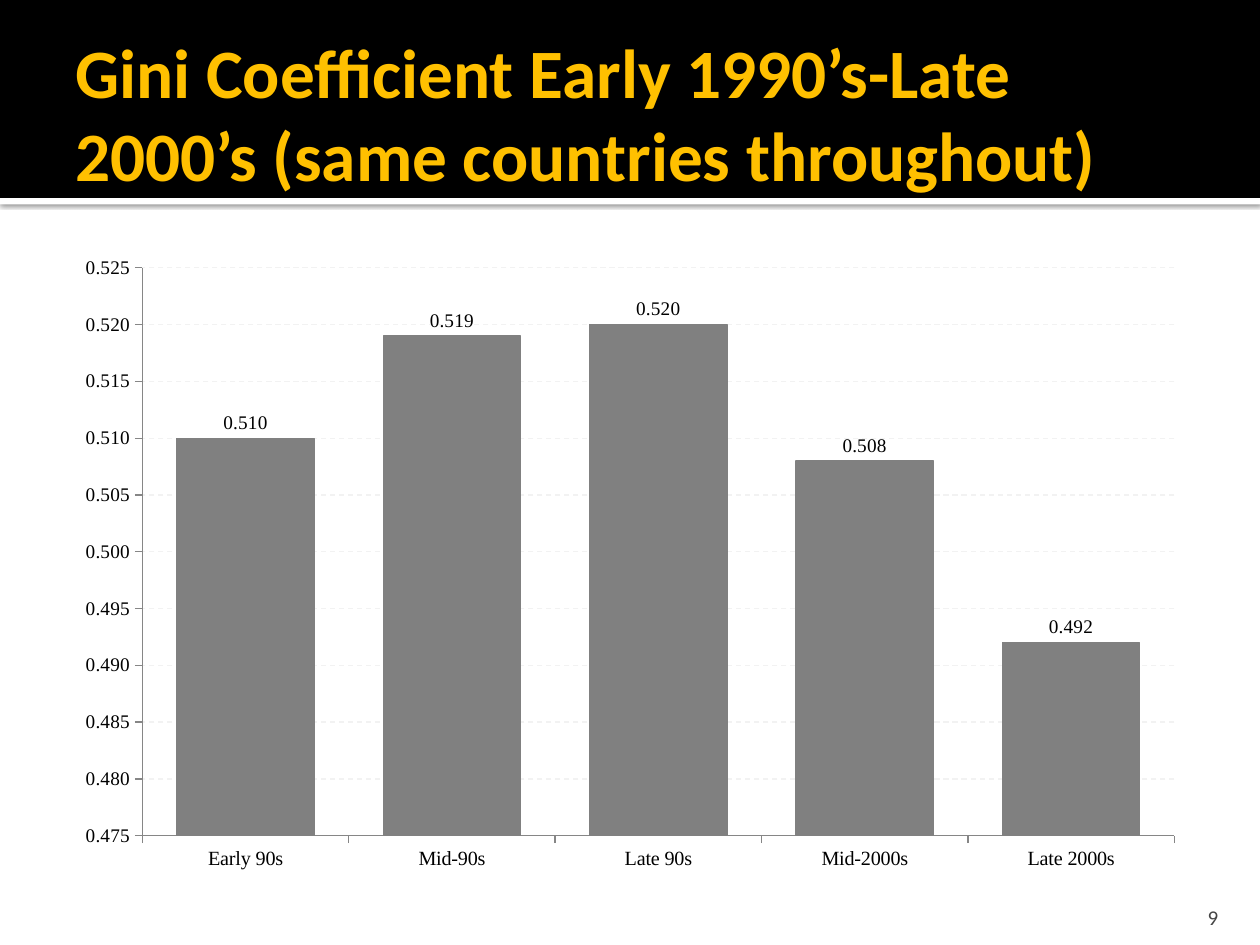
"""Build a slide with a column chart of Gini coefficients over five periods."""
import pptx
import pptx.chart.data
import pptx.dml.color
import pptx.enum.chart
import pptx.enum.dml
import pptx.enum.shapes
import pptx.enum.text
import pptx.oxml
import pptx.util
from pptx.util import Cm, Pt

TITLE = "Gini Coefficient Early 1990’s-Late 2000’s (same countries throughout)"
PAGE_NUMBER = "9"
GINI = {
    "Early 90s": 0.510,
    "Mid-90s": 0.519,
    "Late 90s": 0.520,
    "Mid-2000s": 0.508,
    "Late 2000s": 0.492,
}
NUMBER_FORMAT = "0.000"
AXIS_RANGE = (0.475, 0.525, 0.005)
SLIDE_SIZE = (25.4, 19.05)
HEADER_HEIGHT = 3.99
STRIP_HEIGHT = 0.13
MARGIN = 1.27
CONTENT_WIDTH = SLIDE_SIZE[0] - 2 * MARGIN
SHADOW = (
    '<a:effectLst xmlns:a="http://schemas.openxmlformats.org/drawingml/2006/main">'
    '<a:outerShdw blurRad="31750" dist="10160" dir="5400000" algn="tl" rotWithShape="0">'
    '<a:srgbClr val="000000"><a:alpha val="60000"/></a:srgbClr>'
    "</a:outerShdw></a:effectLst>"
)


def color(value):
    return pptx.dml.color.RGBColor.from_string(value)


def style_font(font, name, size, value, bold=False):
    font.name, font.size, font.bold = name, Pt(size), bold
    font.color.rgb = color(value)


def style_line(line, value):
    line.color.rgb = color(value)
    line.width = Pt(0.75)


def add_band(slide, top, height, fill):
    shape = slide.shapes.add_shape(
        pptx.enum.shapes.MSO_SHAPE.RECTANGLE, 0, Cm(top), Cm(SLIDE_SIZE[0]), Cm(height))
    shape.shadow.inherit = False
    shape.fill.solid()
    shape.fill.fore_color.rgb = color(fill)
    shape.line.fill.background()
    return shape


def add_text(slide, text, box, insets, anchor, alignment, font):
    frame = slide.shapes.add_textbox(*map(Cm, box)).text_frame
    frame.word_wrap = True
    frame.vertical_anchor = anchor
    frame.margin_left, frame.margin_top, frame.margin_right, frame.margin_bottom = map(Cm, insets)
    paragraph = frame.paragraphs[0]
    paragraph.alignment = alignment
    run = paragraph.add_run()
    run.text = text
    style_font(run.font, *font)


def add_gini_chart(slide):
    data = pptx.chart.data.CategoryChartData(number_format=NUMBER_FORMAT)
    data.categories = list(GINI)
    data.add_series("Series 1", list(GINI.values()))
    chart = slide.shapes.add_chart(
        pptx.enum.chart.XL_CHART_TYPE.COLUMN_CLUSTERED,
        Cm(MARGIN), Cm(4.93), Cm(CONTENT_WIDTH), Cm(12.85), data).chart
    chart.has_legend = False
    chart.has_title = False
    style_font(chart.font, "Times New Roman", 11, "000000")

    plot = chart.plots[0]
    plot.gap_width = 50
    plot.vary_by_categories = False
    series = plot.series[0]
    series.format.fill.solid()
    series.format.fill.fore_color.rgb = color("808080")
    style_line(series.format.line, "808080")
    labels = series.data_labels
    labels.show_value = True
    labels.number_format, labels.number_format_is_linked = NUMBER_FORMAT, False
    labels.position = pptx.enum.chart.XL_LABEL_POSITION.OUTSIDE_END
    style_font(labels.font, "Times New Roman", 11, "000000")

    for axis, size in ((chart.category_axis, 11.5), (chart.value_axis, 11)):
        axis.major_tick_mark = pptx.enum.chart.XL_TICK_MARK.OUTSIDE
        axis.minor_tick_mark = pptx.enum.chart.XL_TICK_MARK.NONE
        style_line(axis.format.line, "868686")
        style_font(axis.tick_labels.font, "Times New Roman", size, "000000")

    values = chart.value_axis
    values.minimum_scale, values.maximum_scale, values.major_unit = AXIS_RANGE
    values.tick_labels.number_format = NUMBER_FORMAT
    values.tick_labels.number_format_is_linked = False
    values.has_major_gridlines = True
    gridline = values.major_gridlines.format.line
    style_line(gridline, "F2F2F2")
    gridline.dash_style = pptx.enum.dml.MSO_LINE.DASH


def main():
    presentation = pptx.Presentation()
    presentation.slide_width, presentation.slide_height = map(Cm, SLIDE_SIZE)
    slide = presentation.slides.add_slide(presentation.slide_layouts[6])
    anchors, alignments = pptx.enum.text.MSO_ANCHOR, pptx.enum.text.PP_ALIGN

    strip = add_band(slide, HEADER_HEIGHT, STRIP_HEIGHT, "FFFFFF")
    properties = strip.element.spPr
    properties.replace(properties[-1], pptx.oxml.parse_xml(SHADOW))
    add_band(slide, 0, HEADER_HEIGHT, "000000")
    add_text(slide, TITLE, (MARGIN, 0.43, CONTENT_WIDTH, 3.48), (0.25, 0.33, 0.13, 0.13),
             anchors.MIDDLE, alignments.LEFT, ("Calibri", 39.6, "FFC000", True))
    add_text(slide, PAGE_NUMBER, (22.78, 17.98, 2.03, 0.76), (0.25, 0.13, 0.25, 0),
             anchors.BOTTOM, alignments.RIGHT, ("Calibri", 12, "454545"))
    add_gini_chart(slide)
    presentation.save("out.pptx")


if __name__ == "__main__":
    main()
